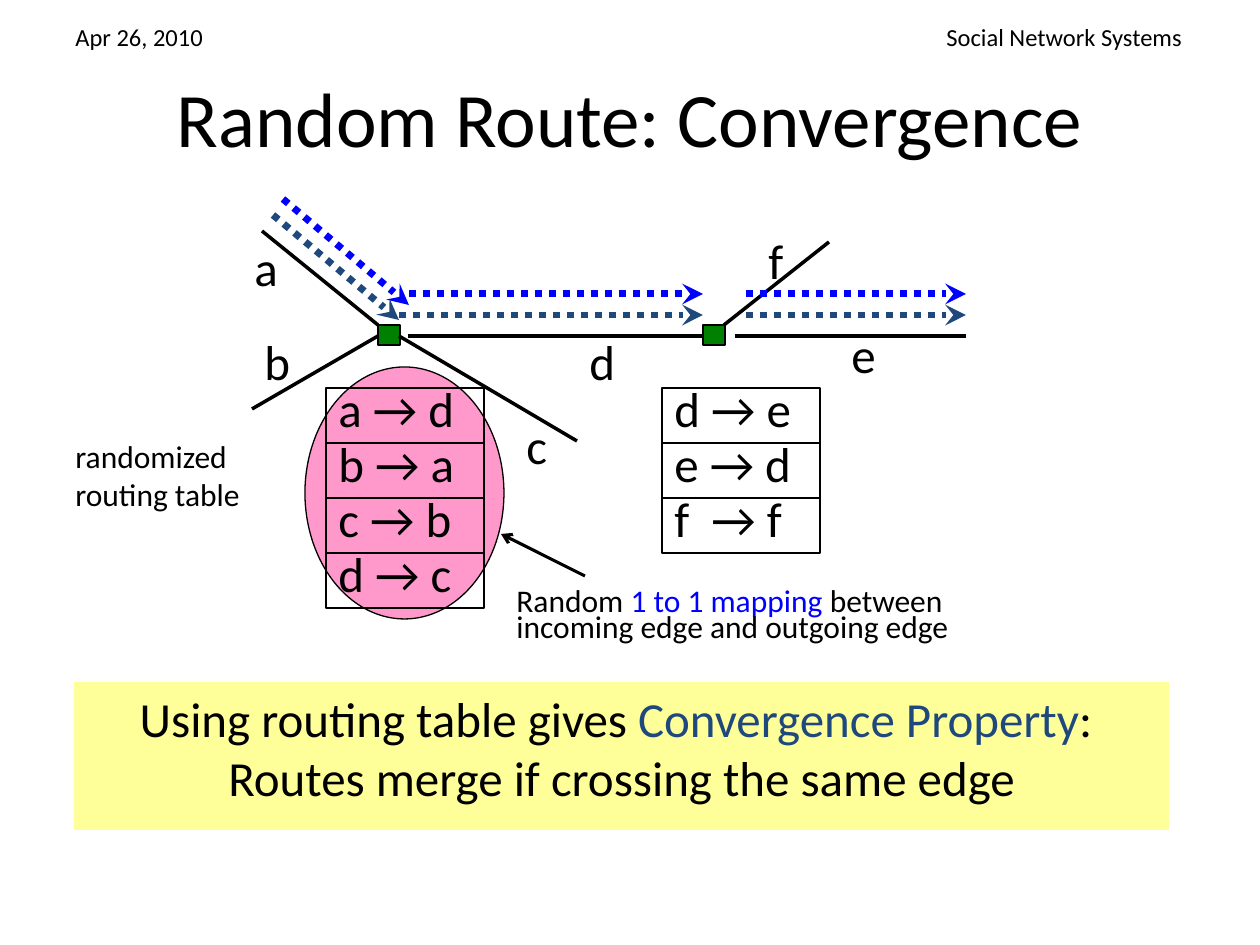
import dataclasses
import typing

import lxml.etree
import pptx
import pptx.dml.color
import pptx.enum.dml
import pptx.enum.shapes
import pptx.enum.text
import pptx.oxml.ns
import pptx.util

SCALE = 914400 / 126
FONT = "Calibri"
HUES = {
    "black": "000000",
    "blue": "0000FF",
    "navy": "1F497D",
    "green": "008000",
    "pink": "FF99CC",
    "yellow": "FFFF99",
}
FORMS = pptx.enum.shapes.MSO_SHAPE
ALIGN = pptx.enum.text.PP_ALIGN
ANCHOR = pptx.enum.text.MSO_ANCHOR

Run = tuple[str, str]
Lines = list[list[Run]]


@dataclasses.dataclass
class Box:
    left: int
    top: int
    width: int
    height: int


@dataclasses.dataclass
class Edge:
    x1: int
    y1: int
    x2: int
    y2: int


@dataclasses.dataclass
class Label:
    text: str
    box: Box
    size: int = 28


@dataclasses.dataclass
class Table:
    left: int
    top: int
    rows: list[str]


def emu(px: int) -> int:
    return round(px * SCALE)


def place(box: Box) -> list[int]:
    return [emu(n) for n in dataclasses.astuple(box)]


def hue(name: str) -> pptx.dml.color.RGBColor:
    return pptx.dml.color.RGBColor.from_string(HUES[name])


def plain(text: str) -> Lines:
    return [[(part, "black")] for part in text.split("\n")]


def write(frame: typing.Any, lines: Lines, *, size: int = 28, align: typing.Any = ALIGN.LEFT,
          anchor: typing.Any = ANCHOR.TOP, space: float = 1.0) -> None:
    frame.word_wrap = True
    frame.vertical_anchor = anchor
    for i, runs in enumerate(lines):
        para = frame.paragraphs[0] if i == 0 else frame.add_paragraph()
        para.alignment = align
        para.line_spacing = space
        for words, tint in runs:
            run = para.add_run()
            run.text = words
            run.font.name = FONT
            run.font.size = pptx.util.Pt(size)
            run.font.color.rgb = hue(tint)


def add_form(slide: typing.Any, kind: typing.Any, box: Box, fill: str | None = None,
             line: bool = True) -> typing.Any:
    form = slide.shapes.add_shape(kind, *place(box))
    form.shadow.inherit = False
    if fill:
        form.fill.solid()
        form.fill.fore_color.rgb = hue(fill)
    else:
        form.fill.background()
    if line:
        form.line.color.rgb = hue("black")
        form.line.width = pptx.util.Pt(0.75)
    else:
        form.line.fill.background()
    return form


def add_edge(slide: typing.Any, edge: Edge, tint: str = "black", width: float = 2,
             dots: bool = False, head: str | None = None) -> None:
    ends = [emu(n) for n in dataclasses.astuple(edge)]
    link = slide.shapes.add_connector(pptx.enum.shapes.MSO_CONNECTOR.STRAIGHT, *ends)
    link.line.color.rgb = hue(tint)
    link.line.width = pptx.util.Pt(width)
    if dots:
        link.line.dash_style = pptx.enum.dml.MSO_LINE.ROUND_DOT
    qn = pptx.oxml.ns.qn
    props = link.element.spPr
    if head:
        lxml.etree.SubElement(props.find(qn("a:ln")), qn("a:tailEnd"), type=head)
    lxml.etree.SubElement(props, qn("a:effectLst"))


def add_text(slide: typing.Any, box: Box, lines: Lines, **style: typing.Any) -> None:
    write(slide.shapes.add_textbox(*place(box)).text_frame, lines, **style)


def add_table(slide: typing.Any, table: Table) -> None:
    for i, row in enumerate(table.rows):
        box = Box(table.left, table.top + 55 * i, 158, 55)
        cell = add_form(slide, FORMS.RECTANGLE, box)
        write(cell.text_frame, plain(row), space=0.7)


LABELS = [
    Label("Social Network Systems", Box(934, 16, 266, 43), 14),
    Label("Apr 26, 2010", Box(63, 16, 158, 43), 14),
    Label("randomized\nrouting table", Box(63, 431, 257, 128), 18),
    Label("a", Box(242, 231, 53, 72)),
    Label("b", Box(252, 325, 53, 72)),
    Label("c", Box(514, 409, 53, 72)),
    Label("d", Box(577, 325, 53, 72)),
    Label("e", Box(839, 318, 53, 72)),
    Label("f", Box(756, 224, 53, 72)),
]
TABLES = [
    Table(326, 388, ["a → d", "b → a", "c → b", "d → c"]),
    Table(662, 388, ["d → e", "e → d", "f  → f"]),
]
EDGES = [
    Edge(262, 231, 378, 325),
    Edge(399, 336, 577, 441),
    Edge(408, 336, 702, 336),
    Edge(378, 336, 252, 409),
    Edge(735, 336, 966, 336),
    Edge(724, 325, 829, 242),
]
ROUTES = {
    "navy": [Edge(273, 215, 399, 320), Edge(399, 315, 703, 315), Edge(746, 315, 966, 315)],
    "blue": [Edge(283, 199, 409, 305), Edge(409, 294, 703, 294), Edge(746, 294, 966, 294)],
}
HINT = [
    [("Random ", "black"), ("1 to 1 mapping", "blue"), (" between", "black")],
    [("incoming edge and outgoing edge", "black")],
]
CLAIM = [
    [("Using routing table gives ", "black"), ("Convergence Property", "navy"), (": ", "black")],
    [("Routes merge if crossing the same edge", "black")],
]


def main() -> None:
    deck = pptx.Presentation()
    deck.slide_width, deck.slide_height = emu(1260), emu(945)
    slide = deck.slides.add_slide(deck.slide_layouts[5])

    title = slide.shapes.title
    title.left, title.top, title.width, title.height = place(Box(63, 38, 1134, 158))
    write(title.text_frame, plain("Random Route: Convergence"), size=44,
          align=ALIGN.CENTER, anchor=ANCHOR.MIDDLE)

    add_form(slide, FORMS.OVAL, Box(305, 367, 199, 252), "pink")
    add_text(slide, Box(504, 585, 672, 98), HINT, size=18, space=0.7)
    add_edge(slide, Edge(585, 576, 501, 534), width=1.75, head="arrow")

    for left in (378, 703):
        add_form(slide, FORMS.RECTANGLE, Box(left, 325, 22, 20), "green")
    for table in TABLES:
        add_table(slide, table)
    for edge in EDGES:
        add_edge(slide, edge)
    for label in LABELS:
        add_text(slide, label.box, plain(label.text), size=label.size)
    for tint, route in ROUTES.items():
        for edge in route:
            add_edge(slide, edge, tint, 4, dots=True, head="stealth")

    claim = add_form(slide, FORMS.RECTANGLE, Box(74, 682, 1095, 148), "yellow", line=False)
    write(claim.text_frame, CLAIM, align=ALIGN.CENTER)

    deck.save("out.pptx")


if __name__ == "__main__":
    main()
